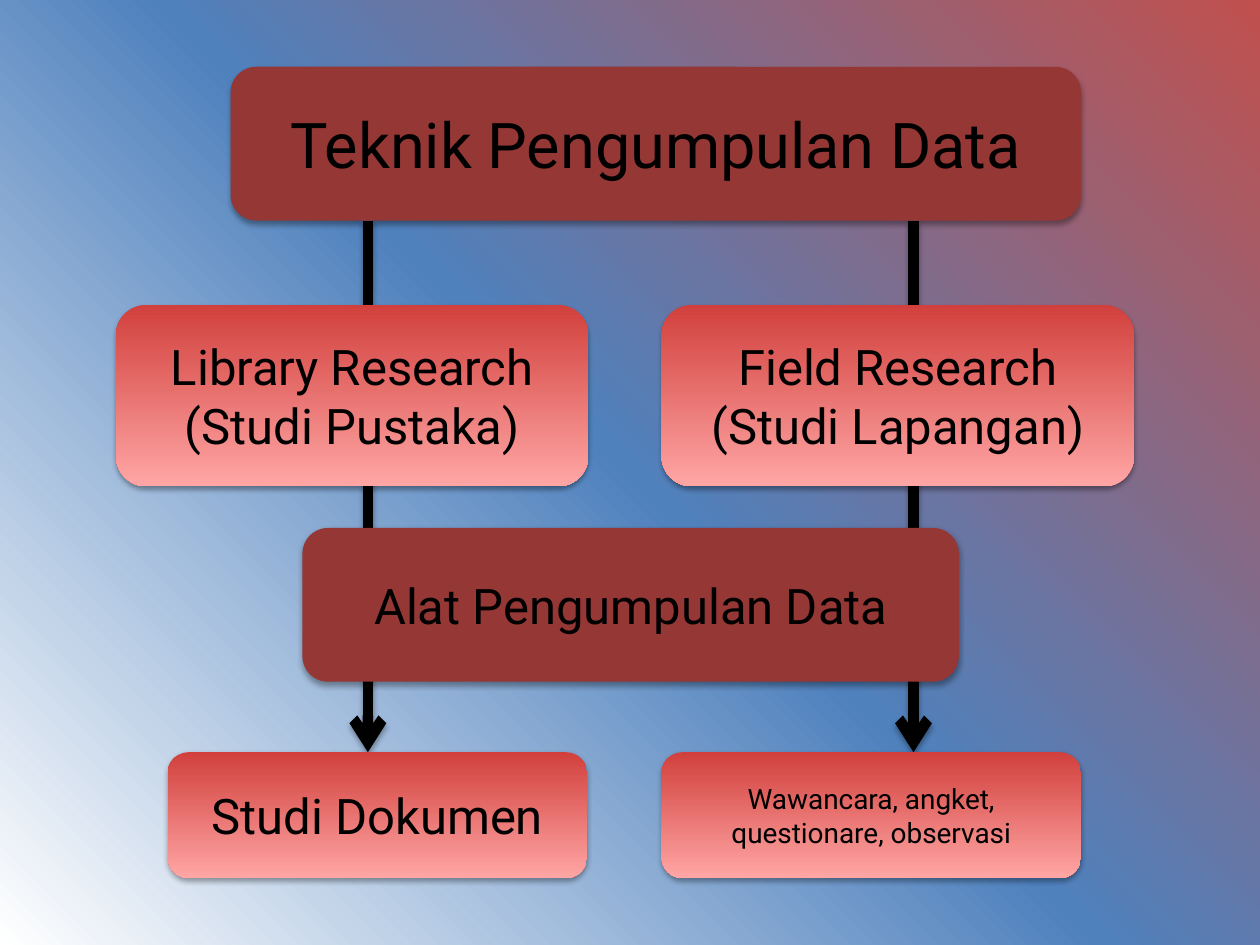
"""Build a flow chart slide of data collection techniques and tools."""
from dataclasses import dataclass
from pptx import Presentation
from pptx.dml.color import RGBColor as RGB
from pptx.enum.shapes import MSO_CONNECTOR as Link, MSO_SHAPE as Form
from pptx.enum.text import MSO_ANCHOR as Anchor, PP_ALIGN as Align
from pptx.oxml import parse_xml
from pptx.oxml.ns import nsdecls
from pptx.util import Inches, Pt


@dataclass(frozen=True)
class Theme:
    font: str = "Roboto"
    ink: str = "000000"
    dark: str = "953735"
    fade: tuple = ("D1403C", "FFA6A5")
    back: tuple = ("FFFFFF", "4F81BD", "C0504D")
    title: int = 36
    body: int = 28
    small: int = 16
    stroke: int = 6


theme = Theme()


def cast(item):
    item._element.spPr.append(parse_xml(
        f'<a:effectLst {nsdecls("a")}>'
        f'<a:outerShdw blurRad="{Pt(3.1)}" dist="{Pt(1.8)}" dir="5400000" rotWithShape="0">'
        f'<a:srgbClr val="{theme.ink}"><a:alpha val="35000"/></a:srgbClr>'
        '</a:outerShdw></a:effectLst>'))


deck = Presentation()
deck.slide_width, deck.slide_height = Inches(10), Inches(7.5)
slide = deck.slides.add_slide(deck.slide_layouts[6])

stops = "".join(
    f'<a:gs pos="{i * 50000}"><a:srgbClr val="{tone}"/></a:gs>'
    for i, tone in enumerate(theme.back))
slide.element.cSld.insert(0, parse_xml(
    f'<p:bg {nsdecls("p", "a")}><p:bgPr><a:gradFill rotWithShape="1">'
    f'<a:gsLst>{stops}</a:gsLst><a:path path="circle">'
    '<a:fillToRect t="100000" r="100000"/></a:path></a:gradFill>'
    '<a:effectLst/></p:bgPr></p:bg>'))

for x in (7.25, 2.92):
    arrow = slide.shapes.add_connector(
        Link.STRAIGHT, Inches(x), Inches(1.75), Inches(x), Inches(5.97))
    arrow.line.color.rgb = RGB.from_string(theme.ink)
    arrow.line.width = Pt(theme.stroke)
    arrow.line._get_or_add_ln().append(
        parse_xml(f'<a:tailEnd {nsdecls("a")} type="arrow"/>'))
    cast(arrow)

boxes = [
    ("Teknik Pengumpulan Data", 1.83, 0.53, 6.75, 1.22, theme.title, False),
    ("Library Research\n(Studi Pustaka)", 0.92, 2.42, 3.75, 1.44, theme.body, True),
    ("Field Research\n(Studi Lapangan)", 5.25, 2.42, 3.75, 1.44, theme.body, True),
    ("Alat Pengumpulan Data", 2.4, 4.19, 5.21, 1.22, theme.body, False),
    ("Studi Dokumen", 1.33, 5.97, 3.33, 1, theme.body, True),
    ("Wawancara, angket, questionare, observasi", 5.25, 5.97, 3.33, 1, theme.small, True),
]

for text, x, y, w, h, size, faded in boxes:
    box = slide.shapes.add_shape(
        Form.ROUNDED_RECTANGLE, Inches(x), Inches(y), Inches(w), Inches(h))
    if faded:
        box.fill.gradient()
        box.fill.gradient_angle = 270
        for stop, tone in zip(box.fill.gradient_stops, theme.fade):
            stop.color.rgb = RGB.from_string(tone)
    else:
        box.fill.solid()
        box.fill.fore_color.rgb = RGB.from_string(theme.dark)
    box.line.fill.background()
    cast(box)
    frame = box.text_frame
    frame.word_wrap = True
    frame.vertical_anchor = Anchor.MIDDLE
    frame.text = text
    for para in frame.paragraphs:
        para.alignment = Align.CENTER
        para.font.name = theme.font
        para.font.size = Pt(size)
        para.font.color.rgb = RGB.from_string(theme.ink)

deck.save("out.pptx")
